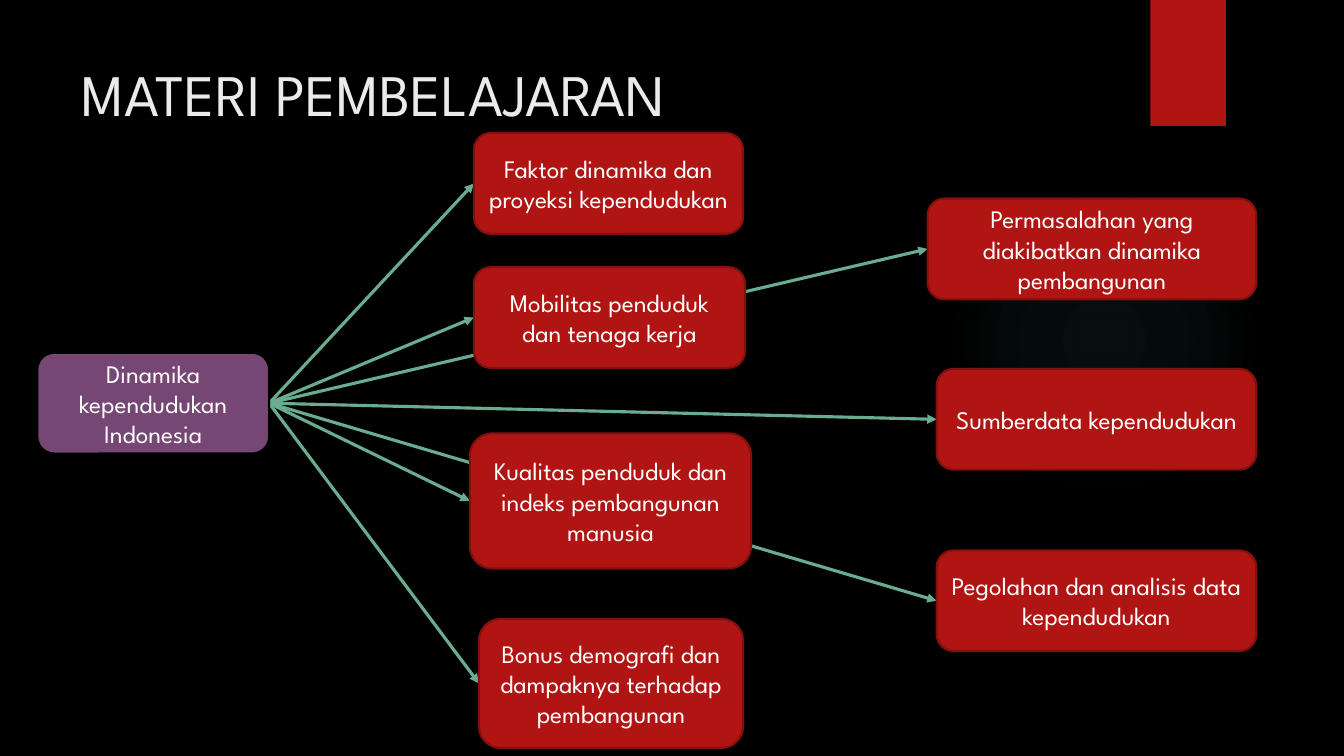
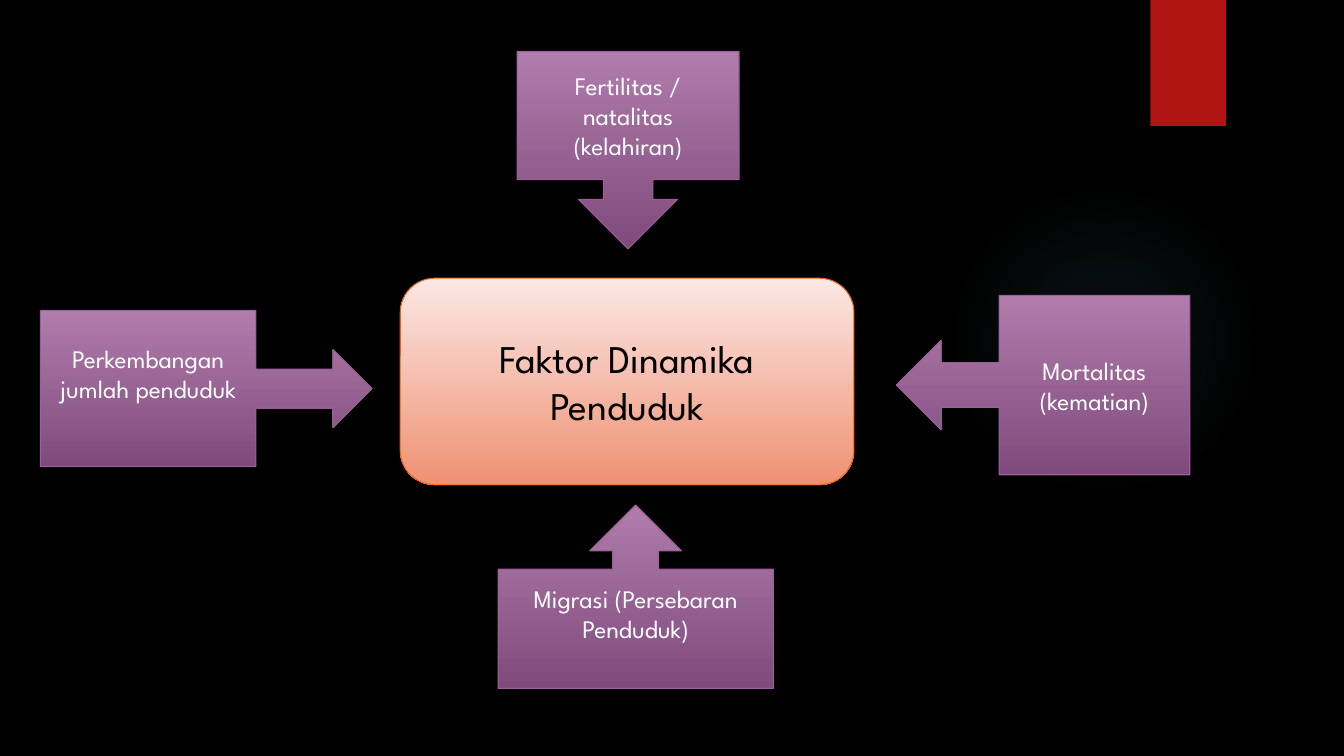
from dataclasses import dataclass

from lxml import etree
from pptx import Presentation
from pptx.dml.color import RGBColor as Rgb
from pptx.enum.shapes import MSO_CONNECTOR as Link, MSO_SHAPE as Geo
from pptx.enum.text import MSO_ANCHOR as Anchor, PP_ALIGN as Align
from pptx.oxml import parse_xml
from pptx.oxml.ns import qn
from pptx.shapes.autoshape import Shape
from pptx.slide import Slide
from pptx.util import Inches, Pt

FONT = "League Spartan"
HUES = {
    "black": "000000", "white": "FFFFFF", "title": "EBEBEB",
    "red": "B01513", "edge": "82100E", "plum": "764674",
    "green": "6AAC90", "glow": "50B9C1",
    "lilac": "AF7CAC", "grape": "7F4B7C", "mauve": "9E5E9B",
    "blush": "FBE8E4", "coral": "EF9173", "orange": "EA6312",
}
LEFT, RIGHT = 1, 3
NS = "http://schemas.openxmlformats.org/drawingml/2006/main"


@dataclass
class Box:
    text: str
    x: float
    y: float
    w: float
    h: float
    fill: tuple[str, ...] = ("red",)
    line: str = "edge"
    width: float = 1.5
    geo: Geo = Geo.ROUNDED_RECTANGLE
    size: int = 18
    color: str = "white"
    foot: float = 0.05


@dataclass
class Callout(Box):
    fill: tuple[str, ...] = ("lilac", "grape")
    line: str = "mauve"
    width: float = 0.75


ROOT = Box("Dinamika kependudukan Indonesia", 0.37, 3.5, 2.3, 1,
           fill=("plum",), line="black")
TOPICS = [
    Box("Pegolahan dan analisis data kependudukan", 9.29, 5.46, 3.17, 1),
    Box("Sumberdata kependudukan", 9.29, 3.66, 3.17, 1),
    Box("Permasalahan yang diakibatkan dinamika pembangunan",
        9.2, 1.97, 3.26, 1),
    Box("Bonus demografi dan dampaknya terhadap pembangunan",
        4.75, 6.14, 2.62, 1.28),
    Box("Kualitas penduduk dan indeks pembangunan manusia",
        4.66, 4.3, 2.79, 1.34),
    Box("Mobilitas penduduk dan tenaga kerja", 4.7, 2.65, 2.69, 1),
    Box("Faktor dinamika dan proyeksi kependudukan", 4.7, 1.32, 2.67, 1),
]
FACTORS = [
    Box("Faktor Dinamika Penduduk", 3.97, 2.76, 4.5, 2.05,
        fill=("blush", "coral"), line="orange", width=0.75,
        size=28, color="black"),
    Callout("Perkembangan jumlah penduduk", 0.4, 3.08, 3.29, 1.55,
            geo=Geo.RIGHT_ARROW_CALLOUT, foot=0.35),
    Callout("Fertilitas / natalitas (kelahiran)", 5.13, 0.51, 2.2, 1.96,
            geo=Geo.DOWN_ARROW_CALLOUT),
    Callout("Mortalitas (kematian)", 8.89, 2.93, 2.91, 1.78,
            geo=Geo.LEFT_ARROW_CALLOUT),
    Callout("Migrasi (Persebaran Penduduk)", 4.94, 5.01, 2.73, 1.82,
            geo=Geo.UP_ARROW_CALLOUT, foot=0.35),
]


def rgb(name: str) -> Rgb:
    return Rgb.from_string(HUES[name])


def write(shape: Shape, text: str, *, size: int = 18, color: str = "white",
          align: Align = Align.CENTER, foot: float = 0.05) -> None:
    frame = shape.text_frame
    frame.word_wrap = True
    frame.vertical_anchor = Anchor.MIDDLE
    frame.margin_bottom = Inches(foot)
    para = frame.paragraphs[0]
    para.alignment = align
    run = para.add_run()
    run.text = text
    run.font.name = FONT
    run.font.size = Pt(size)
    run.font.color.rgb = rgb(color)


def paint(shape: Shape, hues: tuple[str, ...]) -> None:
    """Fill with one colour, or with two from top to bottom."""
    fill = shape.fill
    if len(hues) == 1:
        fill.solid()
        fill.fore_color.rgb = rgb(hues[0])
        return
    fill.gradient()
    fill.gradient_angle = 270
    for stop, hue in zip(fill.gradient_stops, hues):
        stop.color.rgb = rgb(hue)


def add(slide: Slide, geo: Geo, x: float, y: float, w: float,
        h: float) -> Shape:
    """Add a shape without shadow or outline."""
    shape = slide.shapes.add_shape(
        geo, Inches(x), Inches(y), Inches(w), Inches(h))
    shape.shadow.inherit = False
    shape.line.fill.background()
    return shape


def draw(slide: Slide, box: Box) -> Shape:
    shape = add(slide, box.geo, box.x, box.y, box.w, box.h)
    paint(shape, box.fill)
    shape.line.color.rgb = rgb(box.line)
    shape.line.width = Pt(box.width)
    write(shape, box.text, size=box.size, color=box.color, foot=box.foot)
    return shape


def glow(slide: Slide) -> None:
    """Add the faint round light that fades out to its rim."""
    shape = add(slide, Geo.OVAL, 9.41, 1.83, 3.08, 3.08)
    shape.fill.background()
    stops = "".join(
        f'<a:gs pos="{pos}000"><a:srgbClr val="{HUES["glow"]}">'
        f'<a:alpha val="{alpha}000"/></a:srgbClr></a:gs>'
        for pos, alpha in ((0, 7), (36, 6), (69, 0)))
    grad = parse_xml(
        f'<a:gradFill xmlns:a="{NS}"><a:gsLst>{stops}</a:gsLst>'
        '<a:path path="circle"><a:fillToRect l="50000" t="50000" '
        'r="50000" b="50000"/></a:path></a:gradFill>')
    props = shape._element.spPr
    props.replace(props.find(qn("a:noFill")), grad)


def join(slide: Slide, start: Shape, end: Shape) -> None:
    """Run an arrow, behind the boxes, from right side to left side."""
    line = slide.shapes.add_connector(Link.STRAIGHT, 0, 0, 0, 0)
    line.begin_connect(start, RIGHT)
    line.end_connect(end, LEFT)
    line.line.color.rgb = rgb("green")
    line.line.width = Pt(2.25)
    etree.SubElement(line.line._get_or_add_ln(), qn("a:tailEnd"),
                     type="triangle")
    etree.SubElement(line._element.spPr, qn("a:effectLst"))
    start._element.addprevious(line._element)


def base(deck: Presentation) -> Slide:
    """Add a slide with the shared backdrop, light and red tab."""
    slide = deck.slides.add_slide(deck.slide_layouts[6])
    back = slide.background.fill
    back.solid()
    back.fore_color.rgb = rgb("black")
    glow(slide)
    paint(add(slide, Geo.RECTANGLE, 11.41, 0, 0.75, 1.25), ("red",))
    return slide


def title(slide: Slide, text: str) -> None:
    box = slide.shapes.add_textbox(
        Inches(0.71), Inches(0.5), Inches(10.29), Inches(0.84))
    write(box, text, size=42, color="title", align=Align.LEFT)


def main() -> None:
    deck = Presentation()
    deck.slide_width, deck.slide_height = Inches(13.33), Inches(7.5)

    slide = base(deck)
    title(slide, "MATERI PEMBELAJARAN")
    root = draw(slide, ROOT)
    for topic in TOPICS:
        join(slide, root, draw(slide, topic))

    slide = base(deck)
    for factor in FACTORS:
        draw(slide, factor)

    deck.save("out.pptx")


if __name__ == "__main__":
    main()
